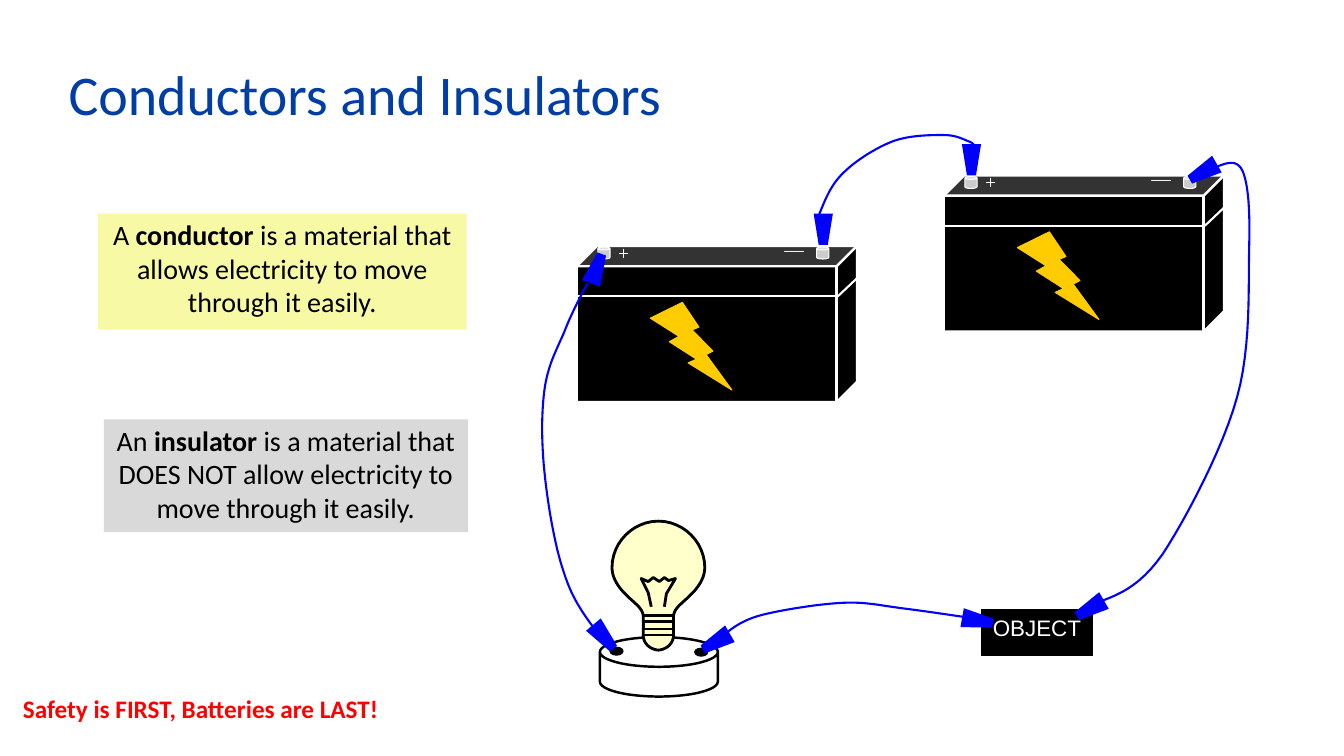
from lxml import etree
from pptx import Presentation
from pptx.dml.color import RGBColor
from pptx.enum.shapes import MSO_CONNECTOR, MSO_SHAPE
from pptx.enum.text import MSO_ANCHOR, PP_ALIGN
from pptx.oxml.ns import qn
from pptx.util import Inches, Pt

LEFT, CENTER = PP_ALIGN.LEFT, PP_ALIGN.CENTER
TOP, MIDDLE = MSO_ANCHOR.TOP, MSO_ANCHOR.MIDDLE
RECT, CUBE, CAN = MSO_SHAPE.RECTANGLE, MSO_SHAPE.CUBE, MSO_SHAPE.CAN
BOLT, OVAL = MSO_SHAPE.LIGHTNING_BOLT, MSO_SHAPE.OVAL
STRAIGHT = MSO_CONNECTOR.STRAIGHT
BLACK, WHITE, BLUE = "000000", "FFFFFF", "0000FF"

WIRES = [
    [(8.12, 2.14), (8.18, 1.99), (8.24, 1.83), (8.37, 1.71),
     (8.49, 1.59), (8.7, 1.46), (8.86, 1.4), (9.03, 1.34), (9.23, 1.34), (9.36, 1.34),
     (9.48, 1.34), (9.55, 1.38), (9.6, 1.4), (9.66, 1.42), (9.66, 1.44), (9.67, 1.46)],
    [(5.83, 2.81), (5.74, 2.97), (5.66, 3.13), (5.59, 3.31),
     (5.51, 3.49), (5.43, 3.64), (5.4, 3.87), (5.37, 4.1), (5.37, 4.38), (5.4, 4.68),
     (5.43, 4.98), (5.5, 5.41), (5.59, 5.67), (5.67, 5.93), (5.78, 6.08), (5.89, 6.23)],
    [(7.19, 6.29), (7.28, 6.22), (7.37, 6.15), (7.56, 6.1),
     (7.76, 6.05), (8.13, 5.99), (8.37, 5.98), (8.6, 5.97), (8.74, 6.01), (8.99, 6.04),
     (9.23, 6.07), (9.54, 6.12), (9.85, 6.16)],
    [(12.08, 1.65), (12.18, 1.61), (12.28, 1.58), (12.33, 1.71),
     (12.38, 1.84), (12.4, 2.08), (12.39, 2.45), (12.38, 2.83), (12.41, 3.44), (12.27, 3.94),
     (12.13, 4.45), (11.76, 5.15), (11.53, 5.5), (11.29, 5.84), (11.07, 5.91), (10.85, 5.99)],
]
CLIPS = [(5.82, 2.51, 200), (8.07, 2.12, 0), (9.54, 1.43, 0), (11.84, 1.55, 60),
         (7.01, 6.21, 60), (5.89, 6.16, 320), (10.72, 5.88, 60), (9.6, 6, 280)]


def rgb(color):
    return RGBColor.from_string(color)


def paint(sp, fill=None, line=None, width=0.75):
    sp.shadow.inherit = False
    if fill:
        sp.fill.solid()
        sp.fill.fore_color.rgb = rgb(fill)
    else:
        sp.fill.background()
    if line:
        sp.line.color.rgb = rgb(line)
        sp.line.width = Pt(width)
    else:
        sp.line.fill.background()


def add_preset(s, kind, box, fill=None, line=None, width=0.75, adj=None):
    sp = s.shapes.add_shape(kind, *map(Inches, box))
    paint(sp, fill, line, width)
    if adj is not None:
        sp.adjustments[0] = adj
    return sp


def add_path(s, parts, closed, fill=None, line=None, width=0.75):
    emu = [[(Inches(x), Inches(y)) for x, y in part] for part in parts]
    fb = s.shapes.build_freeform(*emu[0][0], scale=1.0)
    fb.add_line_segments(emu[0][1:], close=closed)
    for part in emu[1:]:
        fb.move_to(*part[0])
        fb.add_line_segments(part[1:], close=closed)
    sp = fb.convert_to_shape()
    paint(sp, fill, line, width)
    return sp


def add_line(s, x1, y1, x2, y2):
    c = s.shapes.add_connector(STRAIGHT, *map(Inches, (x1, y1, x2, y2)))
    c.line.color.rgb = rgb(WHITE)
    c.line.width = Pt(1.5)
    etree.SubElement(c._element.spPr, qn("a:effectLst"))


def write(sp, runs, size, font, color, align=LEFT, anchor=TOP, inset=None):
    tf = sp.text_frame
    tf.word_wrap = True
    tf.vertical_anchor = anchor
    if inset is not None:
        tf.margin_left = tf.margin_right = tf.margin_top = tf.margin_bottom = Inches(inset)
    p = tf.paragraphs[0]
    p.alignment = align
    for text, bold in runs:
        r = p.add_run()
        r.text = text
        r.font.size = Pt(size)
        r.font.name = font
        r.font.bold = bold
        r.font.color.rgb = rgb(color)
    return p


def add_label(s, box, text, size, font, color, bold=False, inset=None):
    sp = s.shapes.add_textbox(*map(Inches, box))
    write(sp, [(text, bold)], size, font, color, inset=inset)


def curve(points, steps=12):
    result = [points[0]]
    for i in range(0, len(points) - 1, 3):
        a, b, c, d = points[i:i + 4]
        for k in range(1, steps + 1):
            t = k / steps
            u = 1 - t
            result.append(tuple(u**3 * a[j] + 3 * u * u * t * b[j]
                                + 3 * u * t * t * c[j] + t**3 * d[j] for j in (0, 1)))
    return result


def add_title(s, box):
    title = s.shapes.title
    title.left, title.top, title.width, title.height = map(Inches, box)
    p = write(title, [("Conductors and Insulators", False)], 40, "Calibri", "003DA5",
              anchor=MIDDLE)
    p.line_spacing = 0.9


def add_definition(s, box, fill, article, term, meaning):
    sp = add_preset(s, RECT, box, fill)
    write(sp, [(article, False), (term, True), (meaning, False)], 20, "Calibri", BLACK,
          CENTER, inset=0.04)


def add_battery(s, x, y):
    add_preset(s, CUBE, (x, y, 2.78, 1.55), BLACK, WHITE, 1.75, 0.13)
    add_line(s, x, y + 0.5, x + 2.59, y + 0.5)
    add_line(s, x + 2.59, y + 0.5, x + 2.78, y + 0.32)
    for sign, dx, dy, w, h in (("+", 0.37, -0.09, 0.4, 0.45), ("—", 2.02, -0.13, 0.31, 0.27)):
        add_label(s, (x + dx, y + dy, w, h), sign, 14, "Times New Roman", WHITE, inset=0.04)
    add_preset(s, BOLT, (x + 0.73, y + 0.56, 0.81, 0.87), "FFCC00", "FFCC00")
    for dx in (0.21, 2.38):
        add_preset(s, CAN, (x + dx, y + 0.01, 0.12, 0.12), "CCCCCC", WHITE, adj=0.25)


def add_lamp(s, x, y):
    add_preset(s, CAN, (x, y + 1.15, 1.17, 0.59), None, BLACK, 1.75, 0.5)
    cx = x + 0.58
    neck = curve([(0, 1.28), (0.09, 1.27), (0.15, 1.21), (0.15, 1.13)])
    glass = curve([(0.15, 0.94), (0.16, 0.86), (0.23, 0.82), (0.3, 0.75),
                   (0.4, 0.66), (0.46, 0.56), (0.46, 0.46),
                   (0.46, 0.21), (0.25, 0), (0, 0)])
    half = neck + glass
    outline = half + [(-dx, dy) for dx, dy in reversed(half[1:-1])]
    add_path(s, [[(cx + dx, y + dy) for dx, dy in outline]], True, "FFFFCC", BLACK, 2)
    filament = [(-0.07, 0.85), (-0.1, 0.71), (-0.17, 0.57), (-0.1, 0.6), (-0.05, 0.56),
                (0.01, 0.6), (0.06, 0.56), (0.1, 0.59), (0.17, 0.57), (0.08, 0.72), (0.06, 0.85)]
    thread = [(-0.15, 0.94), (0.15, 0.94), (0.15, 1), (-0.15, 1),
              (-0.15, 1.07), (0.15, 1.07), (0.15, 1.13), (-0.15, 1.13)]
    add_path(s, [[(cx + dx, y + dy) for dx, dy in part] for part in (filament, thread)],
             False, None, BLACK, 2)
    for dx, dy in ((0.94, 1.26), (0.1, 1.25)):
        add_preset(s, OVAL, (x + dx, y + dy, 0.13, 0.08), BLACK, BLACK)


def add_object(s, box):
    sp = add_preset(s, RECT, box, BLACK, BLACK)
    write(sp, [("OBJECT", False)], 16, "Arial", WHITE, CENTER, inset=0.04)


def add_clip(s, x, y, angle):
    corners = [(0, 0), (0.05, 0.31), (0.14, 0.31), (0.19, 0)]
    sp = add_path(s, [[(x + dx, y + dy) for dx, dy in corners]], True, BLUE)
    sp.rotation = angle


def add_circuit(s):
    add_battery(s, 5.72, 2.44)
    add_battery(s, 9.36, 1.74)
    add_lamp(s, 5.95, 5.17)
    add_object(s, (9.73, 6.05, 1.11, 0.45))
    for points in WIRES:
        add_path(s, [curve(points)], False, None, BLUE, 1.5)
    for x, y, angle in CLIPS:
        add_clip(s, x, y, angle)


def main():
    prs = Presentation()
    prs.slide_width, prs.slide_height = Inches(13.33), Inches(7.5)
    s = prs.slides.add_slide(prs.slide_layouts[5])
    add_title(s, (0.58, 0.59, 11.86, 0.76))
    add_label(s, (0.13, 6.83, 8.17, 0.4), "Safety is FIRST, Batteries are LAST!",
              18, "Calibri", "FF0000", True)
    add_circuit(s)
    add_definition(s, (0.97, 2.12, 3.66, 1.15), "F7F9A5", "A ", "conductor",
                   " is a material that allows electricity to move through it easily.")
    add_definition(s, (1.03, 4.16, 3.61, 1.12), "D9D9D9", "An ", "insulator",
                   " is a material that DOES NOT allow electricity to move through it easily.")
    prs.save("out.pptx")


if __name__ == "__main__":
    main()
